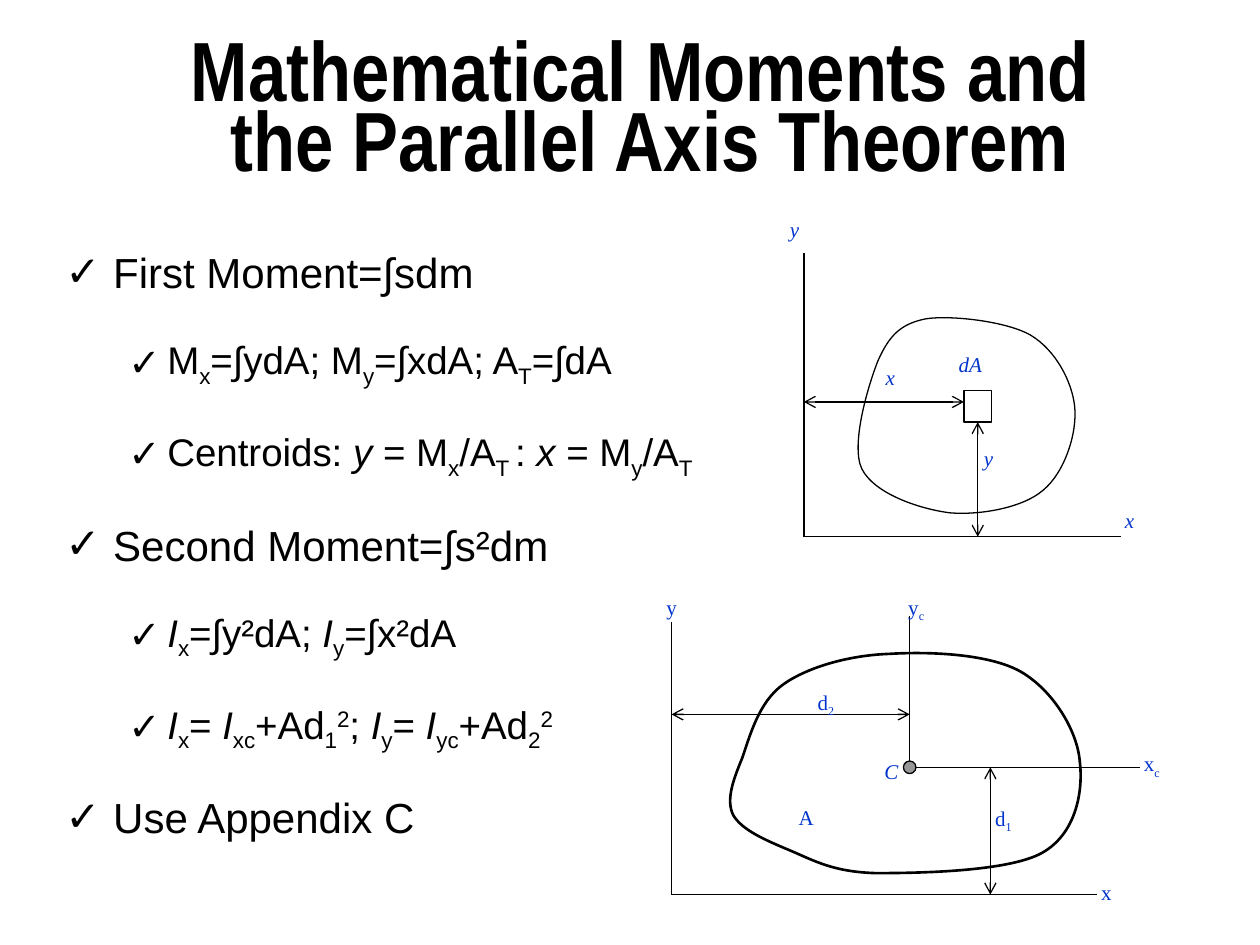
import dataclasses
import pptx
import pptx.util
import pptx.dml.color
import pptx.enum.shapes
import pptx.enum.text
import pptx.oxml.ns
import lxml.etree

Inches, Pt = pptx.util.Inches, pptx.util.Pt
RGB = pptx.dml.color.RGBColor.from_string
Kind = pptx.enum.shapes.MSO_SHAPE
Align = pptx.enum.text.PP_ALIGN


@dataclasses.dataclass
class Theme:
    ink = RGB("000000")
    paper = RGB("FFFFFF")
    blue = RGB("0033CC")
    grey = RGB("969696")
    title = Pt(48)
    body = (Pt(24), Pt(22))
    label = Pt(12)
    thin = Pt(0.75)
    bold = Pt(1.5)


theme = Theme()


def write(par, text):
    """Add runs split at |, where a first _ lowers, ^ raises and ~ slants."""
    for part in text.split("|"):
        mark = part[0] if part[0] in "_^~" else ""
        run = par.add_run()
        run.text = part[len(mark):]
        if mark == "~":
            run.font.italic = True
        elif mark:
            base = "-25000" if mark == "_" else "30000"
            run.font._element.set("baseline", base)


def add(node, tag, **attrs):
    """Add a child in the drawing namespace."""
    child = lxml.etree.SubElement(node, pptx.oxml.ns.qn(tag))
    for key, value in attrs.items():
        child.set(key, value)
    return child


deck = pptx.Presentation()
deck.slide_width, deck.slide_height = Inches(10), Inches(7.5)
slide = deck.slides.add_slide(deck.slide_layouts[6])

# Title
box = slide.shapes.add_textbox(Inches(0.42), Inches(0.08), Inches(9.33), Inches(1.67))
frame = box.text_frame
frame.word_wrap = True
frame.vertical_anchor = pptx.enum.text.MSO_ANCHOR.MIDDLE
par = frame.paragraphs[0]
par.text = "Mathematical Moments and\v the Parallel Axis Theorem"
par.alignment, par.line_spacing = Align.CENTER, 0.7
par.font.name, par.font.size, par.font.bold = "Arial Narrow", theme.title, True
par.font.color.rgb = theme.ink

# Bullet list: level and text
points = [
    (0, "First Moment=∫sdm"),
    (1, "M|_x|=∫ydA; M|_y|=∫xdA; A|_T|=∫dA"),
    (1, "Centroids: |~y |= M|_x|/A|_T |:|~ x |= M|_y|/A|_T"),
    (0, "Second Moment=∫s²dm"),
    (1, "~I|_x|=∫y²dA; |~I|_y|=∫x²dA"),
    (1, "~I|_x|= |~I|_xc|+Ad|_1|^2|; |~I|_y|= |~I|_yc|+Ad|_2|^2"),
    (0, "Use Appendix C"),
]
box = slide.shapes.add_textbox(Inches(0.42), Inches(1.67), Inches(6.75), Inches(5.58))
frame = box.text_frame
frame.word_wrap = True
for num, (level, text) in enumerate(points):
    par = frame.add_paragraph() if num else frame.paragraphs[0]
    write(par, text)
    par.level = level
    left, hang = ((0.38, -0.38), (0.81, -0.31))[level]
    props = par._p.get_or_add_pPr()
    props.set("marL", str(Inches(left)))
    props.set("indent", str(Inches(hang)))
    add(add(props, "a:buClr"), "a:srgbClr", val=str(theme.ink))
    add(props, "a:buFont", typeface="Arial")
    add(props, "a:buChar", char="✓")
    size = theme.body[level]
    par.line_spacing, par.space_before = 1.6, Pt(size.pt * 0.2)
    par.font.name, par.font.size = "Arial", size
    par.font.color.rgb = theme.ink

# Figures: outline is a start point followed by cubic curves;
# lines and arrows are x1, y1, x2, y2; labels are text and box
area = dict(
    start=(6.97, 2.86),
    curves=[
        (7.06, 2.66, 7.15, 2.57, 7.35, 2.53), (7.55, 2.5, 7.99, 2.55, 8.18, 2.66),
        (8.38, 2.78, 8.51, 3.03, 8.53, 3.23), (8.55, 3.44, 8.45, 3.75, 8.28, 3.89),
        (8.12, 4.03, 7.78, 4.09, 7.54, 4.07), (7.3, 4.04, 6.94, 3.92, 6.84, 3.72),
        (6.75, 3.53, 6.89, 3.06, 6.97, 2.86),
    ],
    fill=theme.paper, width=theme.thin,
    lines=[(6.38, 2.01, 6.38, 4.26), (6.38, 4.26, 8.9, 4.26)],
    arrows=[(6.38, 3.19, 7.65, 3.19), (7.76, 3.35, 7.76, 4.26)],
    mark=(Kind.RECTANGLE, (7.65, 3.1, 0.22, 0.25), theme.paper),
    labels=[
        ("~dA", (7.51, 2.74, 0.55, 0.44)), ("~y", (6.17, 1.67, 0.37, 0.46)),
        ("~x", (8.83, 3.98, 0.42, 0.45)), ("~x", (6.93, 2.84, 0.37, 0.49)),
        ("~y", (7.71, 3.49, 0.46, 0.49)),
    ],
)
axes = dict(
    start=(5.89, 6.02),
    curves=[
        (5.95, 5.85, 6.02, 5.57, 6.22, 5.43), (6.42, 5.29, 6.75, 5.2, 7.06, 5.19),
        (7.38, 5.17, 7.85, 5.19, 8.1, 5.33), (8.36, 5.48, 8.55, 5.8, 8.57, 6.04),
        (8.6, 6.28, 8.54, 6.62, 8.27, 6.77), (8, 6.92, 7.28, 6.93, 6.95, 6.93),
        (6.61, 6.92, 6.46, 6.83, 6.27, 6.75), (6.08, 6.67, 5.89, 6.59, 5.82, 6.47),
        (5.76, 6.35, 5.82, 6.19, 5.89, 6.02),
    ],
    fill=None, width=theme.bold,
    lines=[(5.33, 4.94, 5.33, 7.1), (5.33, 7.1, 8.71, 7.1),
           (7.22, 6.09, 9.05, 6.09), (7.22, 6.09, 7.22, 4.89)],
    arrows=[(7.86, 6.09, 7.86, 7.1), (5.33, 5.67, 7.22, 5.67)],
    mark=(Kind.OVAL, (7.17, 6.04, 0.1, 0.1), theme.grey),
    labels=[
        ("y", (5.19, 4.67, 0.28, 0.32)), ("x", (8.64, 6.93, 0.3, 0.3)),
        ("~C", (6.92, 5.97, 0.33, 0.29)), ("x|_c", (8.98, 5.91, 0.35, 0.35)),
        ("y|_c", (7.11, 4.67, 0.38, 0.32)), ("d|_1", (7.8, 6.34, 0.41, 0.35)),
        ("d|_2", (6.39, 5.42, 0.42, 0.32)), ("A", (6.24, 6.34, 0.36, 0.33)),
    ],
)
for fig in (area, axes):
    shapes = slide.shapes.add_group_shape().shapes

    # Outline: every three points become one cubic curve
    pen = shapes.build_freeform(*map(Inches, fig["start"]))
    dots = [tuple(map(Inches, curve[i:i + 2]))
            for curve in fig["curves"] for i in (0, 2, 4)]
    pen.add_line_segments(dots, close=True)
    blob = pen.convert_to_shape()
    legs = list(blob._element.iter(pptx.oxml.ns.qn("a:lnTo")))
    for i in range(0, len(fig["curves"]) * 3, 3):
        curve = lxml.etree.Element(pptx.oxml.ns.qn("a:cubicBezTo"))
        legs[i].addprevious(curve)
        for leg in legs[i:i + 3]:
            curve.append(leg[0])
            leg.getparent().remove(leg)
    blob.shadow.inherit = False
    if fig["fill"]:
        blob.fill.solid()
        blob.fill.fore_color.rgb = fig["fill"]
    else:
        blob.fill.background()
    blob.line.color.rgb, blob.line.width = theme.ink, fig["width"]

    # Axes and arrows
    for ends in fig["lines"] + fig["arrows"]:
        line = shapes.add_connector(
            pptx.enum.shapes.MSO_CONNECTOR.STRAIGHT, *map(Inches, ends))
        line.line.color.rgb, line.line.width = theme.ink, theme.thin
        if ends in fig["arrows"]:
            for tag in ("a:headEnd", "a:tailEnd"):
                add(line.line._get_or_add_ln(), tag, type="arrow")
        add(line._element.spPr, "a:effectLst")

    # Area element or centroid
    kind, place, fill = fig["mark"]
    mark = shapes.add_shape(kind, *map(Inches, place))
    mark.shadow.inherit = False
    mark.fill.solid()
    mark.fill.fore_color.rgb = fill
    mark.line.color.rgb, mark.line.width = theme.ink, theme.thin
    if kind == Kind.RECTANGLE:
        line.begin_connect(mark, 2)

    # Labels
    for text, place in fig["labels"]:
        frame = shapes.add_textbox(*map(Inches, place)).text_frame
        frame.word_wrap = True
        par = frame.paragraphs[0]
        write(par, text)
        par.font.name, par.font.size = "Times New Roman", theme.label
        par.font.color.rgb = theme.blue

deck.save("out.pptx")
